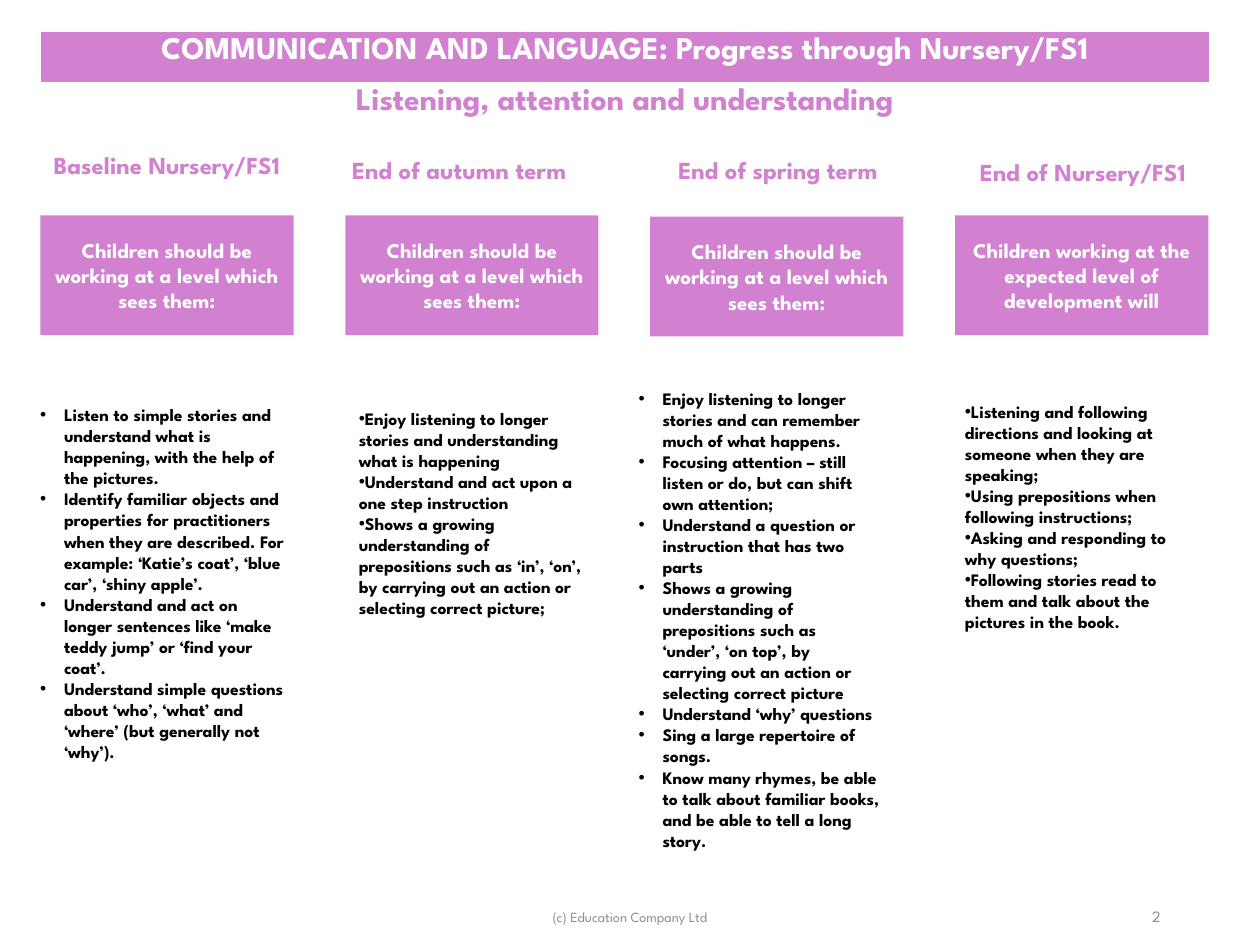
from lxml import etree
from pptx import Presentation
from pptx.dml.color import RGBColor
from pptx.enum.shapes import MSO_SHAPE
from pptx.enum.text import MSO_ANCHOR, PP_ALIGN
from pptx.oxml.ns import qn
from pptx.util import Inches, Pt

ORCHID = RGBColor(0xD2, 0x80, 0xD0)
WHITE = RGBColor(0xFF, 0xFF, 0xFF)
BLACK = RGBColor(0x00, 0x00, 0x00)
GREY = RGBColor(0x8C, 0x8C, 0x8C)
FONT = "League Spartan"

LEFT, PITCH, COLUMN_WIDTH = 0.32, 2.42, 2.01
LEVEL = "Children should be working at a level which sees them:"


def write(frame, lines, size, color, align=PP_ALIGN.LEFT, bold=True):
    """Fill a text frame with one uniformly styled paragraph per line."""
    frame.word_wrap = True
    frame.text = "\n".join(lines)
    for paragraph in frame.paragraphs:
        paragraph.alignment = align
        font = paragraph.font
        font.name, font.size, font.bold = FONT, Pt(size), bold
        font.color.rgb = color


def add_bullets(paragraph, indent):
    properties = paragraph._p.get_or_add_pPr()
    properties.set("marL", str(Inches(indent)))
    properties.set("indent", str(-Inches(indent)))
    etree.SubElement(properties, qn("a:buFont")).set("typeface", "Arial")
    etree.SubElement(properties, qn("a:buChar")).set("char", "•")
    # Bullet settings must come before the default run properties
    properties.append(properties.find(qn("a:defRPr")))


# heading, its (left, top, width), box top, box text,
# list (left, top, width, height), hanging indent, list items
COLUMNS = [
    ("Baseline Nursery/FS1", (0.32, 1.14, 2.01), 1.71, LEVEL,
     (0.22, 3.16, 2.17, 3.3), 0.19, [
         "Listen to simple stories and understand what is happening, "
         "with the help of the pictures.",
         "Identify familiar objects and properties for practitioners when they "
         "are described. For example: ‘Katie’s coat’, ‘blue car’, ‘shiny apple’.",
         "Understand and act on longer sentences like ‘make teddy jump’ "
         "or ‘find your coat’.",
         "Understand simple questions about ‘who’, ‘what’ and ‘where’ "
         "(but generally not ‘why’).",
     ]),
    ("End of autumn term", (2.54, 1.18, 2.21), 1.71, LEVEL,
     (2.75, 3.19, 2.0, 2.12), 0, [
         "Enjoy listening to longer stories and understanding what is happening",
         "Understand and act upon a one step instruction",
         "Shows a growing understanding of prepositions such as ‘in’, ‘on’, "
         "by carrying out an action or selecting correct picture;",
     ]),
    ("End of spring term", (5.17, 1.18, 2.01), 1.72, LEVEL,
     (4.97, 3.03, 2.14, 4.14), 0.19, [
         "Enjoy listening to longer stories and can remember much of what happens.",
         "Focusing attention – still listen or do, but can shift own attention;",
         "Understand a question or instruction that has two parts",
         "Shows a growing\vunderstanding of\vprepositions such as\v"
         "‘under’, ‘on top’, by\vcarrying out an action or\v"
         "selecting correct picture",
         "Understand ‘why’ questions",
         "Sing a large repertoire of songs.",
         "Know many rhymes, be able to talk about familiar books, "
         "and be able to tell a long story.",
     ]),
    ("End of Nursery/FS1", (7.59, 1.2, 2.01), 1.71,
     "Children working at the expected level of development will",
     (7.56, 3.13, 2.05, 2.26), 0, [
         "Listening and following directions and looking at someone "
         "when they are speaking;",
         "Using prepositions when following instructions;",
         "Asking and responding to why questions;",
         "Following stories read to them and talk about the pictures in the book.",
     ]),
]

prs = Presentation()
prs.slide_width, prs.slide_height = Inches(10), Inches(7.5)
slide = prs.slides.add_slide(prs.slide_layouts[6])
shapes = slide.shapes

# Title band and subtitle
titles = shapes.add_table(2, 1, Inches(LEFT), Inches(0.25),
                          Inches(9.28), Inches(0.81)).table
titles.horz_banding = False
title, subtitle = titles.cell(0, 0), titles.cell(1, 0)
title.fill.solid()
title.fill.fore_color.rgb = ORCHID
subtitle.fill.background()
write(title.text_frame, ["COMMUNICATION AND LANGUAGE: Progress through Nursery/FS1"],
      18, WHITE, PP_ALIGN.CENTER)
write(subtitle.text_frame, ["Listening, attention and understanding"],
      18, ORCHID, PP_ALIGN.CENTER)

# One column per stage of the year
for index, column in enumerate(COLUMNS):
    stage, (x, y, width), box_top, expectation, list_area, indent, skills = column

    heading = shapes.add_textbox(Inches(x), Inches(y), Inches(width), Inches(0.34))
    write(heading.text_frame, [stage], 14, ORCHID, PP_ALIGN.CENTER)

    box = shapes.add_shape(MSO_SHAPE.RECTANGLE, Inches(LEFT + index * PITCH),
                           Inches(box_top), Inches(COLUMN_WIDTH), Inches(0.95))
    box.shadow.inherit = False
    box.fill.solid()
    box.fill.fore_color.rgb = ORCHID
    box.line.fill.background()
    box.text_frame.vertical_anchor = MSO_ANCHOR.MIDDLE
    write(box.text_frame, [expectation], 12, WHITE, PP_ALIGN.CENTER)

    skill_list = shapes.add_textbox(*(Inches(length) for length in list_area))
    write(skill_list.text_frame, skills, 10, BLACK)
    for paragraph in skill_list.text_frame.paragraphs:
        add_bullets(paragraph, indent)

# Footer and page number
for text, x, y, width, size, align in [
    ("(c) Education Company Ltd", 3.31, 7.08, 3.38, 8, PP_ALIGN.CENTER),
    ("2", 7.06, 7.07, 2.25, 9, PP_ALIGN.RIGHT),
]:
    footer = shapes.add_textbox(Inches(x), Inches(y), Inches(width), Inches(0.4))
    footer.text_frame.vertical_anchor = MSO_ANCHOR.MIDDLE
    write(footer.text_frame, [text], size, GREY, align, bold=False)

prs.save("out.pptx")
